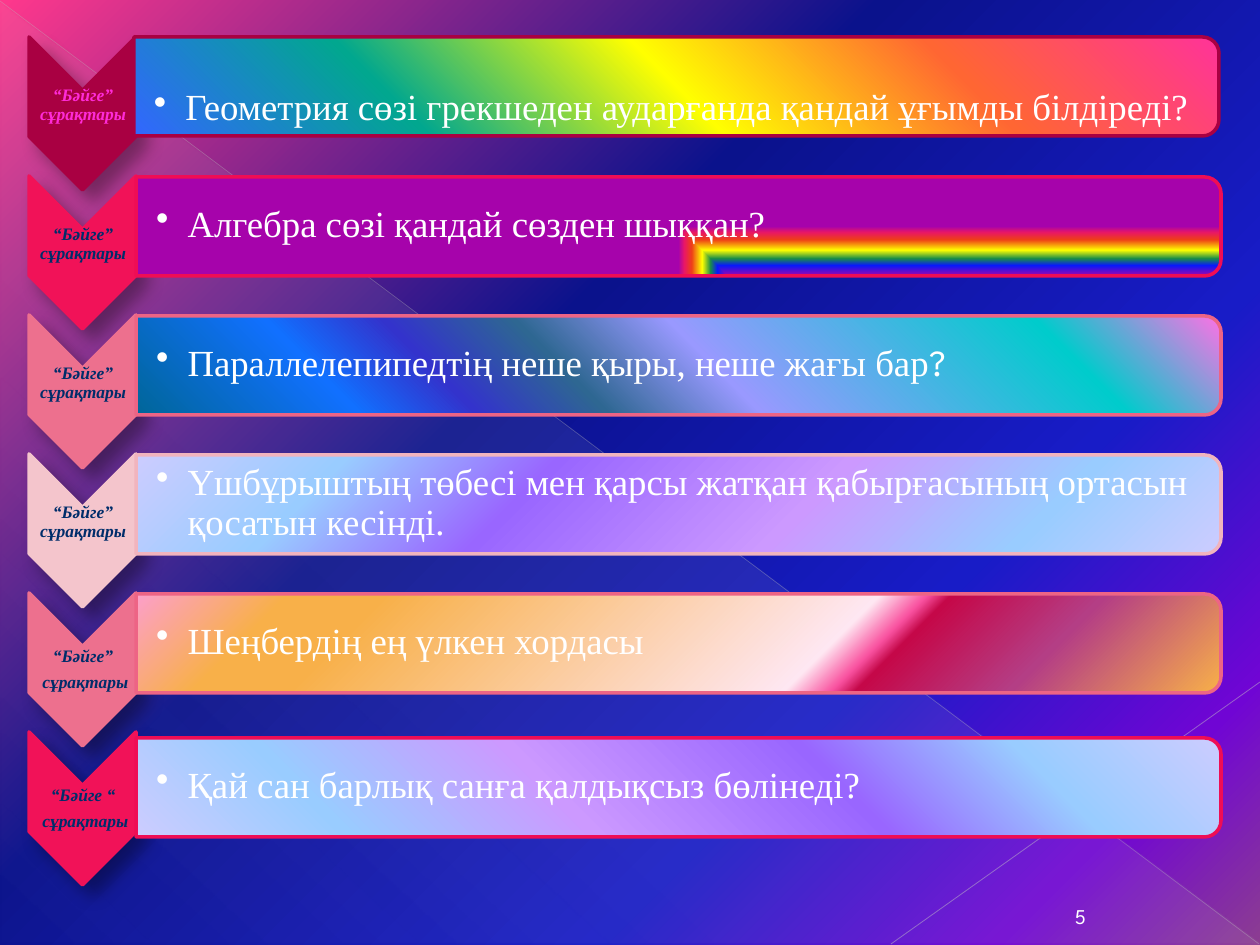
from lxml.etree import SubElement
from pptx import Presentation
from pptx.dml.color import RGBColor
from pptx.enum.shapes import MSO_CONNECTOR as Connector, MSO_SHAPE as Shape
from pptx.enum.text import MSO_ANCHOR as Anchor, PP_ALIGN as Align
from pptx.oxml.ns import qn
from pptx.util import Emu, Pt

SCALE = 914400 / 126
WHITE = RGBColor(0xFF, 0xFF, 0xFF)
NAVY = RGBColor(0x00, 0x2D, 0x6A)
MAGENTA = RGBColor(0xFF, 0x2B, 0xD8)
WINE = RGBColor(0xA9, 0x00, 0x42)
CRIMSON = RGBColor(0xF1, 0x12, 0x58)
CRIMSON_EDGE = RGBColor(0xEF, 0x0D, 0x55)
ROSE = RGBColor(0xED, 0x70, 0x8E)
ROSE_EDGE = RGBColor(0xED, 0x64, 0x85)
BLUSH = RGBColor(0xF4, 0xC5, 0xCC)
BLUSH_EDGE = RGBColor(0xF1, 0xB4, 0xBE)
PALE_GREY = RGBColor(0xBF, 0xBF, 0xBF)
LIGHT_GREY = RGBColor(0xC6, 0xC6, 0xC6)
SERIF = "Times New Roman"
SANS = "League Spartan"


def px(*lengths):
    return [Emu(round(length * SCALE)) for length in lengths]


def set_gradient(grad, stops, angle=None, turns=False):
    for child in list(grad):
        grad.remove(child)
    grad.set("rotWithShape", "1" if turns else "0")
    stop_list = SubElement(grad, qn("a:gsLst"))
    for position, color, *opacity in stops:
        stop = SubElement(stop_list, qn("a:gs"), pos=str(position * 1000))
        tone = SubElement(stop, qn("a:srgbClr"), val=color)
        for value in opacity:
            SubElement(tone, qn("a:alpha"), val=str(value * 1000))
    if angle is None:
        corner = SubElement(grad, qn("a:path"), path="rect")
        SubElement(corner, qn("a:fillToRect"), l="100000", t="100000")
    else:
        SubElement(grad, qn("a:lin"), ang=str(angle * 60000), scaled="0")


RAINBOW = [(0, "FF3399"), (25, "FF6633"), (50, "FFFF00"), (75, "01A78F"), (100, "3366FF")]
CORNER = [(0, "A603AB"), (21, "0819FB"), (35, "1A8D48"), (52, "FFFF00"),
          (73, "EE3F17"), (88, "E81766"), (100, "A603AB")]
OCEAN = [(0, "FF71E5"), (16, "00CCCC"), (47, "9999FF"), (60, "2E6792"),
         (71, "3333CC"), (81, "1170FF"), (100, "006699")]
LILAC = [(0, "CCCCFF"), (18, "99CCFF"), (36, "9966FF"), (61, "CC99FF"),
         (82, "99CCFF"), (100, "CCCCFF")]
SUNSET = [(0, "FC9FCB"), (13, "F8B049"), (21, "F8B049"), (63, "FEE7F2"),
          (67, "F952A0"), (69, "C50849"), (82, "B43E85"), (100, "F8B049")]

ONE_LABEL = ["“Бәйге” сұрақтары"]
QUESTIONS = [
    (86, WINE, WINE, MAGENTA, RAINBOW, 135, False, ONE_LABEL,
     [("Геометрия сөзі грекшеден аударғанда қандай ұғымды білдіреді?", SERIF)]),
    (226, CRIMSON, CRIMSON_EDGE, NAVY, CORNER, None, False, ONE_LABEL,
     [("Алгебра сөзі қандай сөзден шыққан?", SERIF)]),
    (365, ROSE, ROSE_EDGE, NAVY, OCEAN, 45, True, ONE_LABEL,
     [("Параллелепипедтің неше қыры, неше жағы бар", SERIF), ("?", SANS)]),
    (504, BLUSH, BLUSH_EDGE, NAVY, LILAC, 45, False, ONE_LABEL,
     [("Үшбұрыштың төбесі мен қарсы жатқан қабырғасының ортасын қосатын кесінді.", SERIF)]),
    (643, ROSE, ROSE_EDGE, NAVY, SUNSET, 45, False, ["“Бәйге”", " сұрақтары"],
     [("Шеңбердің ең үлкен хордасы", SERIF)]),
    (787, CRIMSON, CRIMSON_EDGE, NAVY, LILAC, 135, False, ["“Бәйге “", " сұрақтары"],
     [("Қай сан барлық санға қалдықсыз бөлінеді?", SERIF)]),
]

deck = Presentation()
deck.slide_width, deck.slide_height = px(1260, 945)
slide = deck.slides.add_slide(deck.slide_layouts[6])
shapes = slide.shapes

backdrop = slide.background.fill
backdrop.gradient()
set_gradient(slide.element.find(".//" + qn("a:gradFill")),
             [(0, "FF388C"), (40, "0A128C"), (70, "181CC7"), (88, "7005D4"), (100, "8C3D91")], 45)

veil = shapes.add_shape(Shape.RIGHT_TRIANGLE, *px(1, 3, 1259, 942))
veil.shadow.inherit = False
veil.line.fill.background()
veil.fill.gradient()
set_gradient(veil.element.spPr.find(qn("a:gradFill")),
             [(0, "D2D2D2", 10), (70, "D2D2D2", 8), (100, "D2D2D2", 1)], 133)

for ends, color, weight, opacity in [((0, 1, 1259, 944), PALE_GREY, 0.39, 35),
                                     ((1260, 682, 891, 944), LIGHT_GREY, 0.47, 45)]:
    ray = shapes.add_connector(Connector.STRAIGHT, *px(*ends))
    ray.line.color.rgb = color
    ray.line.width = Pt(weight)
    tone = ray.line._ln.find(".//" + qn("a:srgbClr"))
    SubElement(tone, qn("a:alpha"), val=str(opacity * 1000))
    SubElement(ray._element.spPr, qn("a:effectLst"))

for row, (middle, color, edge, ink, stops, angle, turns, label, question) in enumerate(QUESTIONS):
    arrow = shapes.add_shape(Shape.CHEVRON, *px(6, 60 + 139 * row, 153, 107))
    arrow.rotation = 90
    arrow.fill.solid()
    arrow.fill.fore_color.rgb = color
    arrow.line.color.rgb = color
    arrow.line.width = Pt(2)
    arrow.shadow.inherit = False
    shade = SubElement(arrow.element.spPr.find(qn("a:effectLst")), qn("a:outerShdw"),
                       blurRad=str(Pt(10.2)), dist=str(Pt(8)), dir="2700000", rotWithShape="0")
    shade_color = SubElement(shade, qn("a:srgbClr"), val="000000")
    SubElement(shade_color, qn("a:alpha"), val="35000")

    caption = shapes.add_textbox(*px(29, 91 + 139 * row, 108, 45)).text_frame
    caption.word_wrap = True
    caption.vertical_anchor = Anchor.MIDDLE
    caption.margin_left, caption.margin_top, caption.margin_right, caption.margin_bottom = px(
        1, 1, 1, 18 if len(label) == 1 else 1)
    for index, words in enumerate(label):
        line = caption.add_paragraph() if index else caption.paragraphs[0]
        line.alignment = Align.CENTER
        line.line_spacing = 0.9
        line.space_after = Pt(4)
        run = line.add_run()
        run.text = words
        run.font.name = SERIF
        run.font.size = Pt(10)
        run.font.bold = run.font.italic = True
        run.font.color.rgb = ink

    shift = 0 if row else -2
    bar = shapes.add_shape(Shape.ROUND_2_SAME_RECTANGLE,
                           *px(629 + shift, middle - 542, 99, 1085))
    bar.rotation = 90
    bar.shadow.inherit = False
    bar.line.color.rgb = edge
    bar.line.width = Pt(2)
    bar.fill.gradient()
    set_gradient(bar.element.spPr.find(qn("a:gradFill")), stops, angle, turns)

    body = shapes.add_textbox(*px(136 + shift, middle - 45, 1080, 89)).text_frame
    body.word_wrap = True
    body.vertical_anchor = Anchor.MIDDLE
    body.margin_left, body.margin_top, body.margin_right, body.margin_bottom = px(
        20, 1 if row else 48, 1, 1)
    item = body.paragraphs[0]
    item.line_spacing = 0.9
    bullet = item._p.get_or_add_pPr()
    bullet.set("marL", "228600")
    bullet.set("indent", "-228600")
    SubElement(bullet, qn("a:buChar"), char="•")
    for words, face in question:
        run = item.add_run()
        run.text = words
        run.font.name = face
        run.font.size = Pt(21)
        run.font.color.rgb = WHITE

footer = shapes.add_textbox(*px(1046, 893, 69, 42)).text_frame
footer.word_wrap = True
footer.vertical_anchor = Anchor.BOTTOM
footer.paragraphs[0].alignment = Align.CENTER
page_number = footer.paragraphs[0].add_run()
page_number.text = "5"
page_number.font.name = SANS
page_number.font.size = Pt(12)
page_number.font.color.rgb = WHITE

deck.save("out.pptx")
